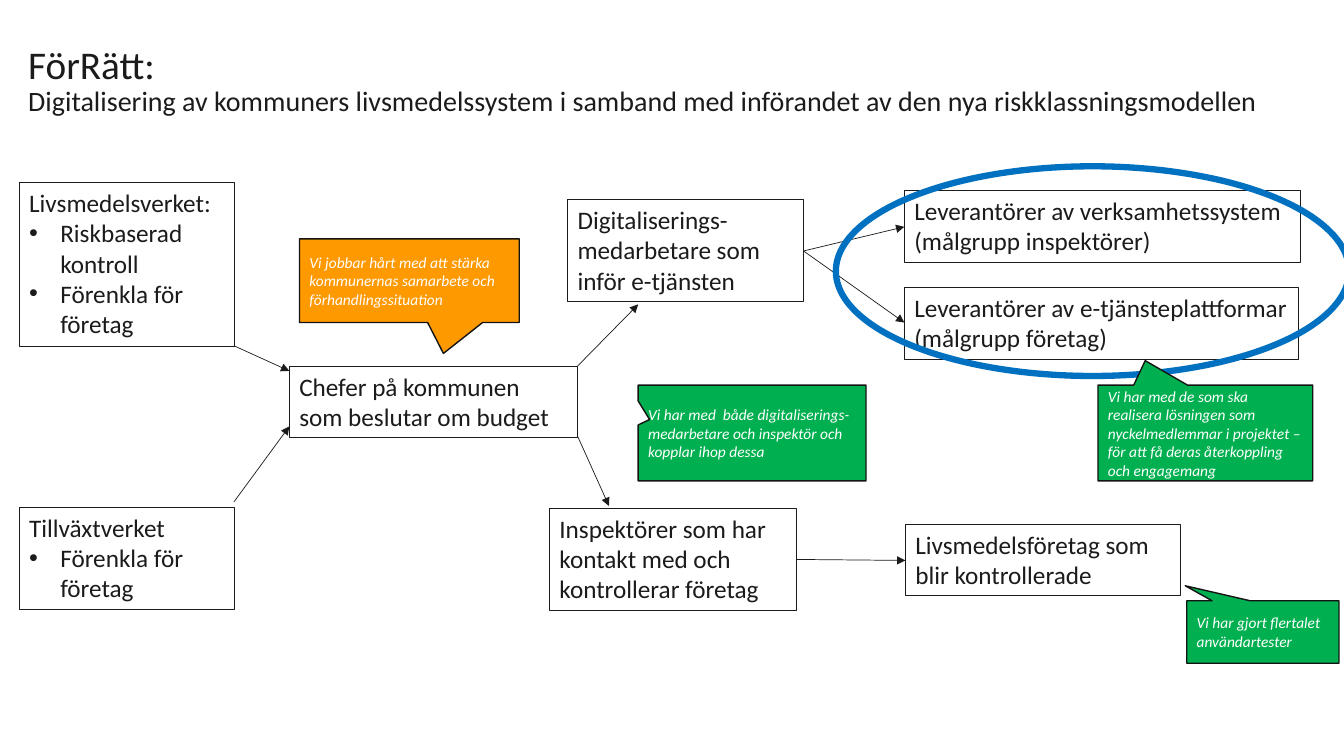
"""Build the FörRätt stakeholder map slide."""
from lxml.etree import SubElement
from pptx import Presentation
from pptx.dml.color import RGBColor
from pptx.enum.shapes import MSO_CONNECTOR, MSO_SHAPE
from pptx.enum.text import MSO_ANCHOR, PP_ALIGN
from pptx.oxml.ns import qn
from pptx.util import Inches, Pt

INK = RGBColor(0x1B, 0x1B, 0x1B)
OUTLINE = RGBColor(0x14, 0x14, 0x14)
WHITE = RGBColor(0xFF, 0xFF, 0xFF)
BLUE = RGBColor(0x00, 0x70, 0xC0)
GREEN = RGBColor(0x00, 0xB0, 0x50)
ORANGE = RGBColor(0xFF, 0x99, 0x00)


def add_outlined(kind, position, line_color, line_width, fill=None):
    shape = slide.shapes.add_shape(kind, *map(Inches, position))
    shape.shadow.inherit = False
    if fill is None:
        shape.fill.background()
    else:
        shape.fill.solid()
        shape.fill.fore_color.rgb = fill
    shape.line.color.rgb = line_color
    shape.line.width = Pt(line_width)
    shape.text_frame.word_wrap = True
    return shape


def style_paragraph(paragraph, size, color, italic=False):
    paragraph.alignment = PP_ALIGN.LEFT
    font = paragraph.font
    font.name = "Calibri"
    font.size = Pt(size)
    font.color.rgb = color
    font.italic = italic


presentation = Presentation()
presentation.slide_width = Inches(13.33)
presentation.slide_height = Inches(7.5)
slide = presentation.slides.add_slide(presentation.slide_layouts[6])

title = slide.shapes.add_textbox(Inches(0.28), Inches(0.15), Inches(12.62), Inches(1.02))
frame = title.text_frame
frame.word_wrap = True
frame.vertical_anchor = MSO_ANCHOR.BOTTOM
frame.margin_left = frame.margin_right = frame.margin_top = frame.margin_bottom = 0
paragraph = frame.paragraphs[0]
paragraph.line_spacing = 0.9
style_paragraph(paragraph, 28, INK)
paragraph.add_run().text = "FörRätt:"
paragraph.add_line_break()
subtitle = paragraph.add_run()
subtitle.text = "Digitalisering av kommuners livsmedelssystem i samband med införandet av den nya riskklassningsmodellen"
subtitle.font.size = Pt(20)

actors = [
    ((0.19, 1.81, 2.13, 1.62), ["Livsmedelsverket:"], ["Riskbaserad kontroll", "Förenkla för företag"]),
    ((0.19, 5.03, 2.13, 1.01), ["Tillväxtverket"], ["Förenkla för företag"]),
    ((2.87, 3.63, 2.86, 0.71), ["Chefer på kommunen", "som beslutar om budget"], []),
    ((8.98, 5.2, 2.73, 0.71), ["Livsmedelsföretag som blir kontrollerade"], []),
    ((8.97, 1.89, 3.93, 0.71), ["Leverantörer av verksamhetssystem", "(målgrupp inspektörer)"], []),
    ((8.97, 2.85, 3.91, 0.71), ["Leverantörer av e-tjänsteplattformar (målgrupp företag)"], []),
    ((5.45, 5.04, 2.45, 1.01), ["Inspektörer som har kontakt med och kontrollerar företag"], []),
    ((5.63, 1.98, 2.34, 1.01), ["Digitaliserings-", "medarbetare som inför e-tjänsten"], []),
]
for position, lines, bullets in actors:
    frame = add_outlined(MSO_SHAPE.RECTANGLE, position, INK, 0.25).text_frame
    frame.vertical_anchor = MSO_ANCHOR.TOP
    frame.text = "\n".join(lines + bullets)
    for index, paragraph in enumerate(frame.paragraphs):
        if index >= len(lines):
            properties = paragraph._p.get_or_add_pPr()
            properties.set("marL", str(Inches(0.31)))
            properties.set("indent", str(-Inches(0.31)))
            SubElement(properties, qn("a:buFont"), typeface="Arial")
            SubElement(properties, qn("a:buChar"), char="•")
        style_paragraph(paragraph, 18, INK)

arrows = [
    (5.73, 3.63, 6.33, 3.02),
    (7.9, 5.55, 8.98, 5.56),
    (2.32, 3.43, 2.87, 3.68),
    (2.32, 4.98, 2.87, 4.23),
    (7.97, 2.49, 8.97, 2.25),
    (7.97, 2.49, 8.97, 3.2),
    (5.73, 4.33, 6.04, 5.02),
]
for ends in arrows:
    arrow = slide.shapes.add_connector(MSO_CONNECTOR.STRAIGHT, *map(Inches, ends))
    arrow.line.color.rgb = INK
    arrow.line.width = Pt(0.5)
    SubElement(arrow.line._get_or_add_ln(), qn("a:tailEnd"), type="triangle")
    SubElement(arrow._element.spPr, qn("a:effectLst"))

add_outlined(MSO_SHAPE.OVAL, (8.29, 1.65, 5.09, 2.08), BLUE, 4.5)

callouts = [
    ((10.89, 3.82, 2.13, 0.95), (-0.28, -0.755), GREEN,
     "Vi har med de som ska realisera lösningen som nyckelmedlemmar i projektet – "
     "för att få deras återkoppling och engagemang"),
    ((6.33, 3.82, 2.26, 0.95), (-0.45, -0.14), GREEN,
     "Vi har med  både digitaliserings-medarbetare och inspektör och kopplar ihop dessa"),
    ((2.97, 2.37, 2.18, 0.83), (0.155, 0.87), ORANGE,
     "Vi jobbar hårt med att stärka kommunernas samarbete och förhandlingssituation"),
    ((11.77, 5.96, 1.51, 0.62), (-0.51, -0.74), GREEN,
     "Vi har gjort flertalet användartester"),
]
for position, pointer, fill, text in callouts:
    callout = add_outlined(MSO_SHAPE.RECTANGULAR_CALLOUT, position, OUTLINE, 1, fill)
    callout.adjustments[0], callout.adjustments[1] = pointer
    callout.text_frame.vertical_anchor = MSO_ANCHOR.MIDDLE
    callout.text_frame.text = text
    style_paragraph(callout.text_frame.paragraphs[0], 11, WHITE, italic=True)

presentation.save("out.pptx")
